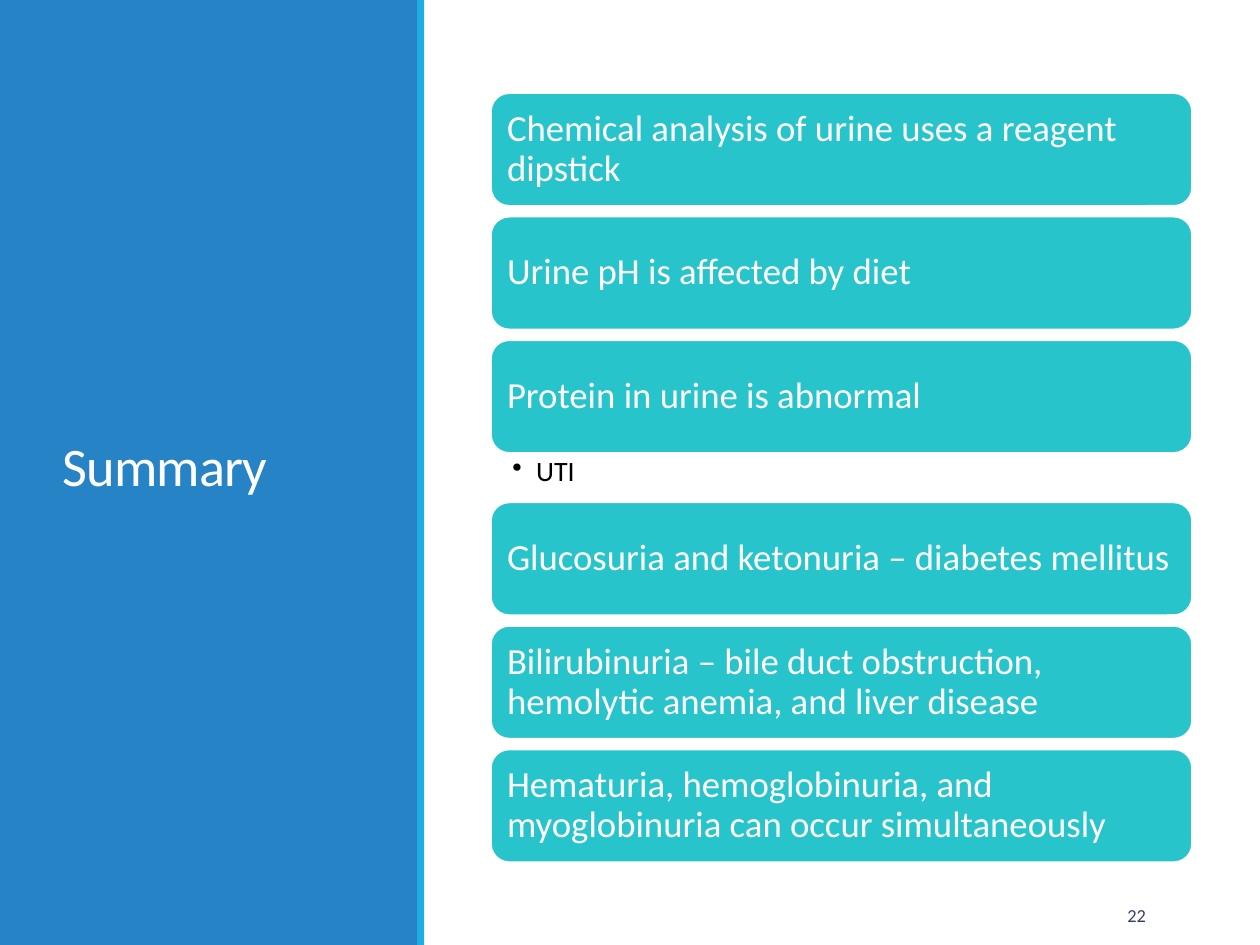
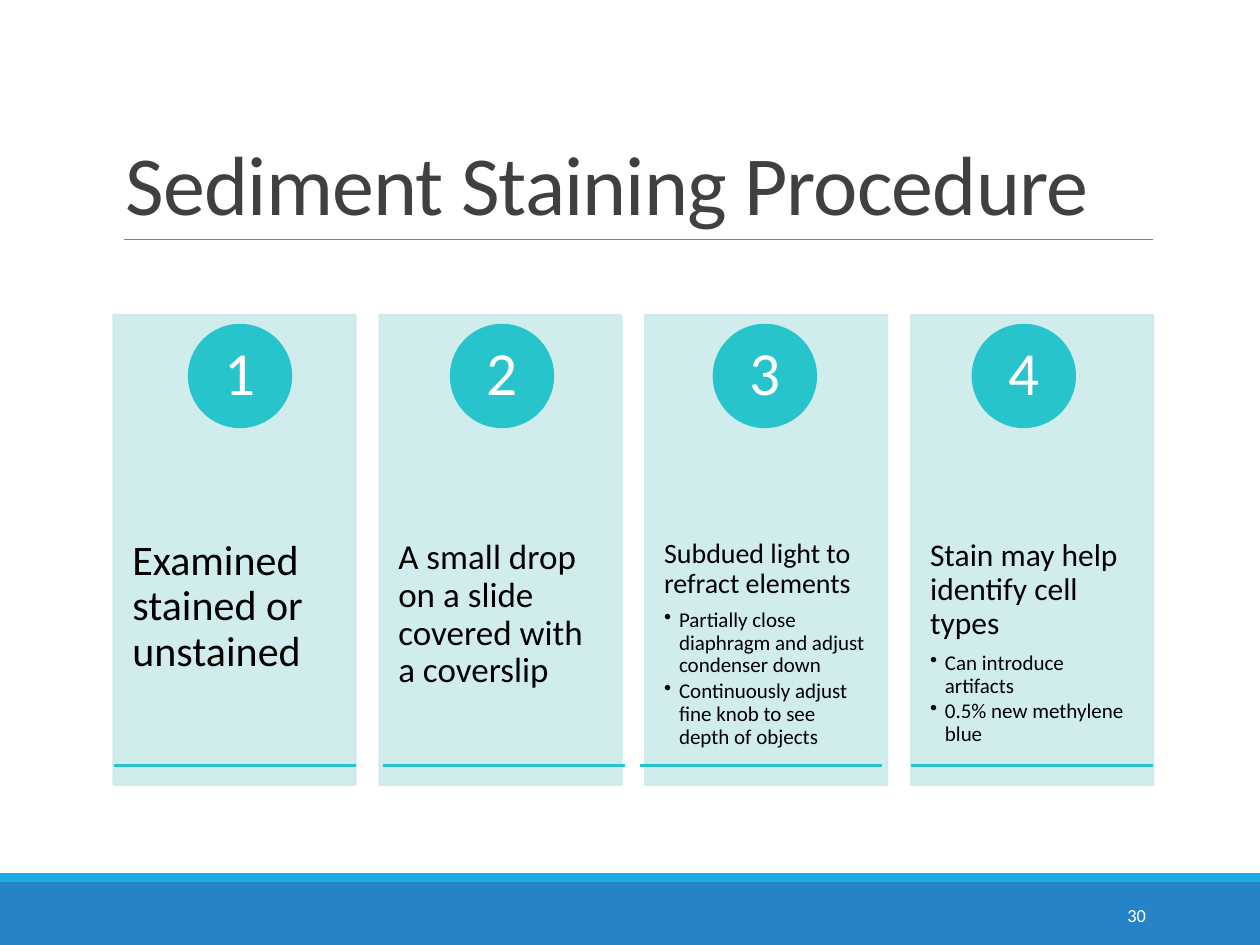
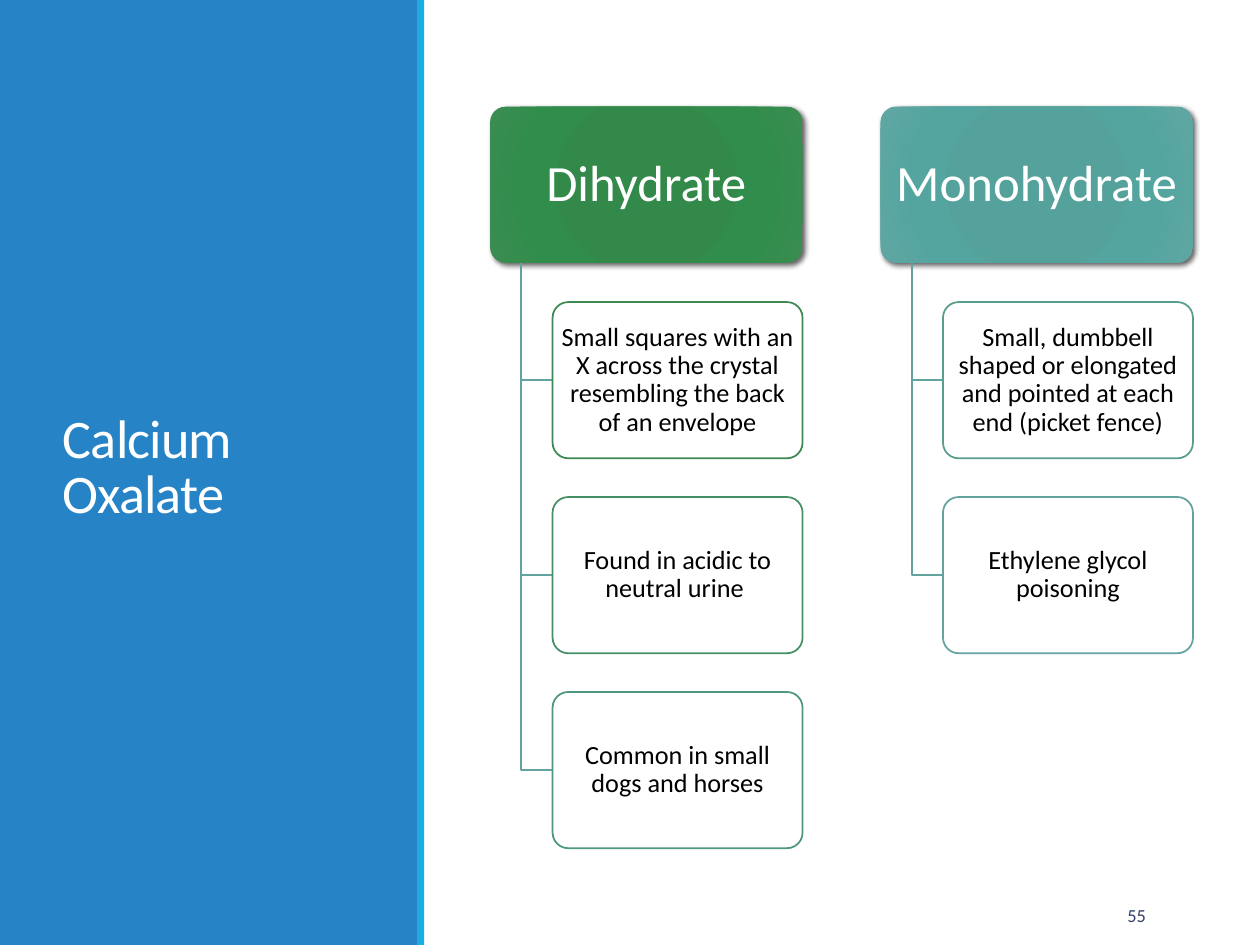
from dataclasses import dataclass

from lxml import etree
from pptx import Presentation
from pptx.dml.color import RGBColor
from pptx.enum.shapes import MSO_CONNECTOR, MSO_SHAPE
from pptx.enum.text import MSO_ANCHOR, PP_ALIGN
from pptx.oxml.ns import qn
from pptx.util import Cm, Pt

RECTANGLE = MSO_SHAPE.RECTANGLE
ROUNDED = MSO_SHAPE.ROUNDED_RECTANGLE
OVAL = MSO_SHAPE.OVAL
STRAIGHT = MSO_CONNECTOR.STRAIGHT
LEFT, CENTER, RIGHT = PP_ALIGN.LEFT, PP_ALIGN.CENTER, PP_ALIGN.RIGHT
TOP, MIDDLE, BOTTOM = MSO_ANCHOR.TOP, MSO_ANCHOR.MIDDLE, MSO_ANCHOR.BOTTOM

WHITE = RGBColor(0xFF, 0xFF, 0xFF)
BLACK = RGBColor(0x00, 0x00, 0x00)
BLUE = RGBColor(0x26, 0x83, 0xC6)
SKY = RGBColor(0x1C, 0xAD, 0xE4)
TURQUOISE = RGBColor(0x28, 0xC4, 0xCC)
PALE_TURQUOISE = RGBColor(0xCD, 0xEA, 0xEC)
CHARCOAL = RGBColor(0x40, 0x40, 0x40)
NAVY = RGBColor(0x34, 0x40, 0x68)
GRAY = RGBColor(0x80, 0x80, 0x80)
TEAL = RGBColor(0x62, 0xA3, 0x9F)

FONT = "Calibri"
SLIDE_WIDTH, SLIDE_HEIGHT = 25.4, 19.05
DEFAULT_INSETS = (0.25, 0.13, 0.25, 0.13)
GRADIENT_STOPS = (0, 34, 70, 100)


@dataclass(frozen=True)
class Box:
    left: float
    top: float
    width: float
    height: float

    def lengths(self) -> tuple:
        return Cm(self.left), Cm(self.top), Cm(self.width), Cm(self.height)


@dataclass(frozen=True)
class Line:
    text: str
    size: float
    space_after: float = 0
    bullet_indent: float = 0


@dataclass(frozen=True)
class Card:
    text: str
    note: str = ""


@dataclass(frozen=True)
class Step:
    lines: tuple
    badge_left: float
    rule_left: float


@dataclass(frozen=True)
class Leaf:
    text: str
    outline: RGBColor


@dataclass(frozen=True)
class Branch:
    name: str
    gradient: tuple
    leaves: tuple


CARDS = (
    Card("Chemical analysis of urine uses a reagent dipstick"),
    Card("Urine pH is affected by diet"),
    Card("Protein in urine is abnormal", note="UTI"),
    Card("Glucosuria and ketonuria – diabetes mellitus"),
    Card("Bilirubinuria – bile duct obstruction, hemolytic anemia, and liver disease"),
    Card("Hematuria, hemoglobinuria, and myoglobinuria can occur simultaneously"),
)


def step_lines(heading: str, size: float, *details: str) -> tuple:
    bullets = [Line(text, 12, 1.8, 0.3) for text in details]
    return (Line(heading, size, size * 0.35), *bullets)


STEPS = (
    Step(step_lines("Examined stained or unstained", 24), 3.81, 2.29),
    Step(step_lines("A small drop on a slide covered with a coverslip", 20), 9.09, 7.72),
    Step(
        step_lines(
            "Subdued light to refract elements",
            16,
            "Partially close diaphragm and adjust condenser down",
            "Continuously adjust fine knob to see depth of objects",
        ),
        14.39,
        12.9,
    ),
    Step(
        step_lines(
            "Stain may help identify cell types",
            18,
            "Can introduce artifacts",
            "0.5% new methylene blue",
        ),
        19.61,
        18.37,
    ),
)

BRANCHES = (
    Branch(
        "Dihydrate",
        ("2F8949", "32894A", "318D4B", "3A8C51"),
        (
            Leaf(
                "Small squares with an X across the crystal resembling the back of an envelope",
                RGBColor(0x3E, 0x88, 0x53),
            ),
            Leaf("Found in acidic to neutral urine ", RGBColor(0x46, 0x90, 0x67)),
            Leaf("Common in small dogs and horses", RGBColor(0x4E, 0x97, 0x7B)),
        ),
    ),
    Branch(
        "Monohydrate",
        ("52A19C", "55A19C", "54A5A0", "5FA6A2"),
        (
            Leaf(
                "Small, dumbbell shaped or elongated and pointed at each end (picket fence)",
                RGBColor(0x57, 0x9E, 0x8E),
            ),
            Leaf("Ethylene glycol poisoning", TEAL),
        ),
    ),
)


def add_element(parent, tag: str, **attributes):
    values = {name: str(value) for name, value in attributes.items()}
    return etree.SubElement(parent, qn(tag), values)


def write_text(
    shape,
    *lines: Line,
    color: RGBColor = BLACK,
    alignment=LEFT,
    anchor=MIDDLE,
    insets: tuple = DEFAULT_INSETS,
    line_spacing: float = 0.9,
    tracking: int = 0,
) -> None:
    frame = shape.text_frame
    frame.word_wrap = True
    frame.vertical_anchor = anchor
    frame.margin_left, frame.margin_top, frame.margin_right, frame.margin_bottom = map(Cm, insets)
    for index, line in enumerate(lines):
        paragraph = frame.add_paragraph() if index else frame.paragraphs[0]
        if line.bullet_indent:
            properties = paragraph._p.get_or_add_pPr()
            properties.set("marL", str(Cm(line.bullet_indent)))
            properties.set("indent", str(-Cm(line.bullet_indent)))
            add_element(properties, "a:buChar", char="•")
        paragraph.alignment = alignment
        paragraph.line_spacing = line_spacing
        paragraph.space_after = Pt(line.space_after)
        run = paragraph.add_run()
        run.text = line.text
        run.font.name = FONT
        run.font.size = Pt(line.size)
        run.font.color.rgb = color
        if tracking:
            run._r.get_or_add_rPr().set("spc", str(tracking))


def add_text(slide, box: Box, *lines: Line, **text_format) -> None:
    write_text(slide.shapes.add_textbox(*box.lengths()), *lines, **text_format)


def add_block(
    slide, kind, box: Box, fill: RGBColor, outline: RGBColor | None = None, width: float = 1.25
):
    shape = slide.shapes.add_shape(kind, *box.lengths())
    shape.shadow.inherit = False
    shape.fill.solid()
    shape.fill.fore_color.rgb = fill
    if outline is None:
        shape.line.fill.background()
    else:
        shape.line.color.rgb = outline
        shape.line.width = Pt(width)
    return shape


def add_rule(slide, left: float, top: float, width: float, color: RGBColor, weight: float) -> None:
    rule = slide.shapes.add_connector(STRAIGHT, Cm(left), Cm(top), Cm(left + width), Cm(top))
    rule.line.color.rgb = color
    rule.line.width = Pt(weight)
    add_element(rule._element.spPr, "a:effectLst")


def make_translucent(shape, percent: int) -> None:
    for color in shape._element.spPr.iter(qn("a:srgbClr")):
        add_element(color, "a:alpha", val=percent * 1000)


def apply_gradient(shape, colors: tuple) -> None:
    solid = shape._element.spPr.find(qn("a:solidFill"))
    gradient = etree.Element(qn("a:gradFill"), rotWithShape="1")
    stops = add_element(gradient, "a:gsLst")
    for position, color in zip(GRADIENT_STOPS, colors):
        stop = add_element(stops, "a:gs", pos=position * 1000)
        add_element(stop, "a:srgbClr", val=color)
    radial = add_element(gradient, "a:path", path="circle")
    add_element(radial, "a:fillToRect", l=100000, t=100000, r=100000, b=100000)
    solid.getparent().replace(solid, gradient)


def apply_shadow(shape) -> None:
    effects = shape._element.spPr.find(qn("a:effectLst"))
    shadow = add_element(
        effects, "a:outerShdw", blurRad=Pt(3), dist=Pt(2), dir=45 * 60000, rotWithShape=0
    )
    color = add_element(shadow, "a:srgbClr", val=BLACK)
    add_element(color, "a:alpha", val=60000)


def add_page_number(slide, number: int, color: RGBColor) -> None:
    add_text(
        slide,
        Box(21.08, 17.93, 2.27, 1.02),
        Line(str(number), 10.5),
        color=color,
        alignment=RIGHT,
        line_spacing=1.0,
    )


def start_panel_slide(presentation, title: str, number: int):
    slide = presentation.slides.add_slide(presentation.slide_layouts[6])
    add_block(slide, RECTANGLE, Box(0, 0, 8.43, SLIDE_HEIGHT), BLUE)
    add_block(slide, RECTANGLE, Box(8.41, 0, 0.14, SLIDE_HEIGHT), SKY)
    add_text(
        slide,
        Box(1.02, 1.45, 6.43, 16.03),
        Line(title, 31),
        color=WHITE,
        line_spacing=0.85,
        tracking=-50,
    )
    add_page_number(slide, number, NAVY)
    return slide


def start_band_slide(presentation, title: str, number: int):
    slide = presentation.slides.add_slide(presentation.slide_layouts[6])
    add_block(slide, RECTANGLE, Box(0, 17.78, SLIDE_WIDTH, 1.27), BLUE)
    add_block(slide, RECTANGLE, Box(0, 17.6, SLIDE_WIDTH, 0.18), SKY)
    add_rule(slide, 2.49, 4.83, 20.75, GRAY, 0.5)
    add_text(
        slide,
        Box(2.29, 0.79, 20.95, 4.04),
        Line(title, 48),
        color=CHARCOAL,
        anchor=BOTTOM,
        line_spacing=0.85,
        tracking=-50,
    )
    add_page_number(slide, number, WHITE)
    return slide


def build_summary(presentation) -> None:
    slide = start_panel_slide(presentation, "Summary", 22)
    left, top, width, height, gap, note_height = 9.88, 1.86, 14.17, 2.31, 0.18, 0.96
    for card in CARDS:
        block = add_block(slide, ROUNDED, Box(left, top, width, height), TURQUOISE, WHITE, 2)
        write_text(block, Line(card.text, 21), color=WHITE, insets=(0.23,) * 4)
        top += height
        if card.note:
            add_text(
                slide,
                Box(left, top, width, note_height),
                Line(card.note, 16, bullet_indent=0.48),
                anchor=TOP,
                insets=(0.45, 0.07, 0.4, 0.07),
            )
        top += note_height if card.note else gap


def build_staining(presentation) -> None:
    slide = start_band_slide(presentation, "Sediment Staining Procedure", 30)
    left, pitch, width, badge_size = 2.29, 5.36, 4.88, 2.06
    for index, step in enumerate(STEPS):
        column_box = Box(left + index * pitch, 6.35, width, 9.47)
        column = add_block(slide, RECTANGLE, column_box, PALE_TURQUOISE, PALE_TURQUOISE)
        make_translucent(column, 90)
        write_text(column, *step.lines, anchor=TOP, insets=(0.38, 4.52, 0.38, 0.91))
        badge_box = Box(step.badge_left, 6.55, badge_size, badge_size)
        badge = add_block(slide, OVAL, badge_box, TURQUOISE, TURQUOISE)
        write_text(
            badge,
            Line(str(index + 1), 35),
            color=WHITE,
            alignment=CENTER,
            insets=(0.15, 0.03, 0.15, 0.03),
        )
        add_rule(slide, step.rule_left, 15.44, width, TURQUOISE, 1.75)


def add_elbow(slide, left: float, top: float, right: float, bottom: float) -> None:
    builder = slide.shapes.build_freeform(Cm(left), Cm(top))
    builder.add_line_segments(
        [(Cm(left), Cm(bottom)), (Cm(right), Cm(bottom))], close=False
    )
    elbow = builder.convert_to_shape()
    elbow.shadow.inherit = False
    elbow.fill.background()
    elbow.line.color.rgb = TEAL
    elbow.line.width = Pt(1)


def build_oxalate(presentation) -> None:
    slide = start_panel_slide(presentation, "Calcium Oxalate", 55)
    top, width, height = 2.15, 6.3, 3.15
    for column, branch in enumerate(BRANCHES):
        left = 9.88 + column * 7.87
        root = add_block(slide, ROUNDED, Box(left, top, width, height), WHITE)
        root.adjustments[0] = 0.1
        apply_gradient(root, branch.gradient)
        apply_shadow(root)
        write_text(
            root,
            Line(branch.name, 29),
            color=WHITE,
            alignment=CENTER,
            insets=(0.15, 0.1, 0.15, 0.1),
        )
        leaf_left = left + 1.26
        for row, leaf in enumerate(branch.leaves):
            leaf_top = 6.09 + row * 3.93
            add_elbow(slide, left + 0.63, top + height, leaf_left, leaf_top + height / 2)
            leaf_box = Box(leaf_left, leaf_top, 5.04, height)
            block = add_block(slide, ROUNDED, leaf_box, WHITE, leaf.outline, 1)
            block.adjustments[0] = 0.1
            write_text(
                block,
                Line(leaf.text, 15),
                alignment=CENTER,
                insets=(0.08, 0.05, 0.08, 0.05),
            )


def main() -> None:
    presentation = Presentation()
    presentation.slide_width = Cm(SLIDE_WIDTH)
    presentation.slide_height = Cm(SLIDE_HEIGHT)
    build_summary(presentation)
    build_staining(presentation)
    build_oxalate(presentation)
    presentation.save("out.pptx")


if __name__ == "__main__":
    main()
